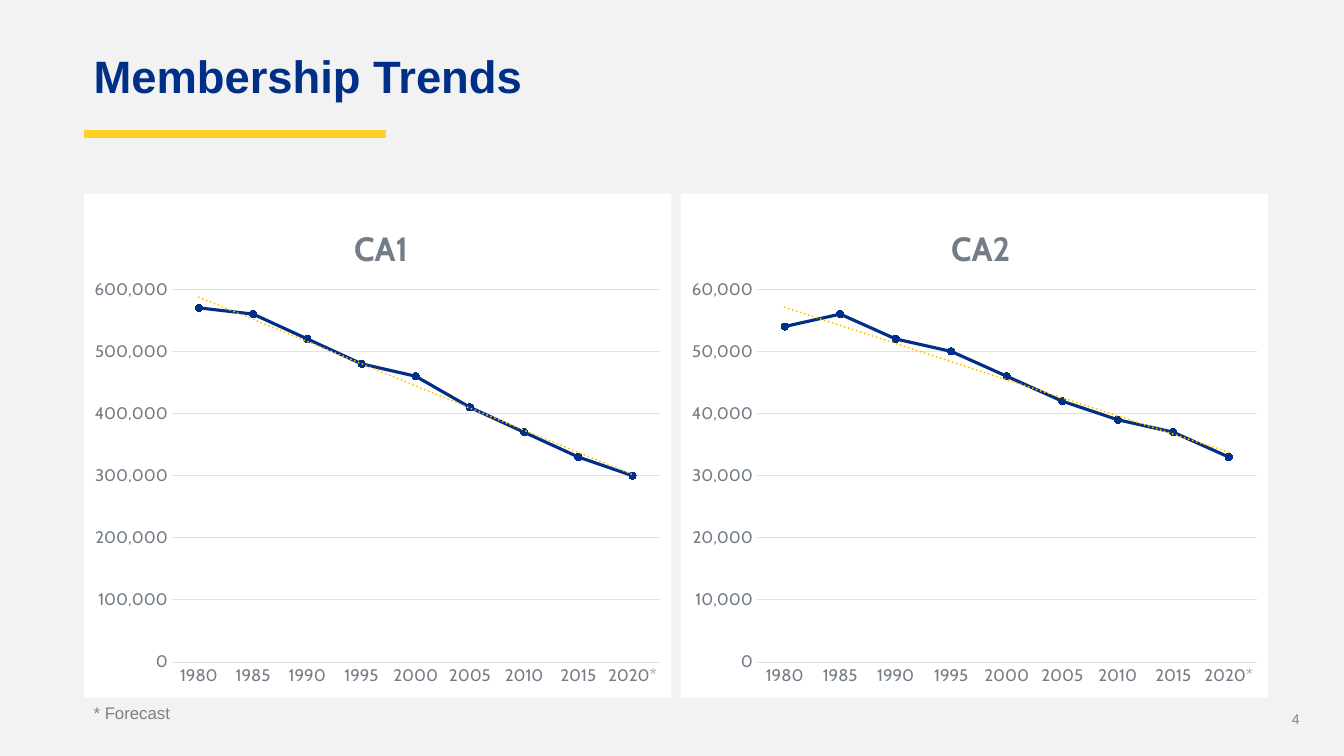
from pptx import Presentation
from pptx.chart.data import CategoryChartData
from pptx.dml.color import RGBColor
from pptx.enum.chart import XL_CHART_TYPE, XL_MARKER_STYLE, XL_TICK_MARK
from pptx.enum.shapes import MSO_CONNECTOR
from pptx.enum.text import MSO_ANCHOR, PP_ALIGN
from pptx.oxml import parse_xml
from pptx.oxml.ns import nsdecls, qn
from pptx.util import Inches, Pt

NAVY, YELLOW, AMBER = "002F87", "FFD127", "FFC000"
SLATE, GRAY, RULE, WHITE, PAPER = "747D86", "808080", "DFE1E3", "FFFFFF", "F2F2F2"

HEADING = "Membership Trends"
FOOTNOTE = "* Forecast"
PAGE = "4"
YEARS = ["1980", "1985", "1990", "1995", "2000", "2005", "2010", "2015", "2020*"]
TRENDS = [
    {"area": "CA1", "step": 100000, "plot_left": 0.15,
     "members": [570000, 560000, 520000, 480000, 460000, 410000, 370000, 330000, 300000]},
    {"area": "CA2", "step": 10000, "plot_left": 0.13,
     "members": [54000, 56000, 52000, 50000, 46000, 42000, 39000, 37000, 33000]},
]
LEFT = 0.83
PANEL_TOP, PANEL_WIDTH, PANEL_HEIGHT, PANEL_GAP = 1.92, 5.83, 5, 0.09


def color(value):
    return RGBColor.from_string(value)


def style_font(font, size, shade, face, bold=False):
    font.size, font.name, font.bold = Pt(size), face, bold
    font.color.rgb = color(shade)


def style_line(line, shade, width):
    line.color.rgb = color(shade)
    line.width = Pt(width)


def add_label(slide, words, box, size, shade, bold=False,
              align=PP_ALIGN.LEFT, anchor=MSO_ANCHOR.TOP):
    frame = slide.shapes.add_textbox(*map(Inches, box)).text_frame
    frame.word_wrap = True
    frame.vertical_anchor = anchor
    paragraph = frame.paragraphs[0]
    paragraph.alignment = align
    run = paragraph.add_run()
    run.text = words
    style_font(run.font, size, shade, "Arial", bold)
    return frame


def place(element, index, **measures):
    for layout in element.findall(qn("c:layout")):
        element.remove(layout)
    target = '<c:layoutTarget val="inner"/>' if "w" in measures else ""
    modes = "".join(f'<c:{key}Mode val="edge"/>' for key in "xy")
    sizes = "".join(f'<c:{key} val="{value:.2f}"/>' for key, value in measures.items())
    element.insert(index, parse_xml(
        f'<c:layout {nsdecls("c")}><c:manualLayout>{target}{modes}{sizes}'
        '</c:manualLayout></c:layout>'))


def add_trend(slide, trend, left):
    data = CategoryChartData(number_format="#,##0")
    data.categories = YEARS
    data.add_series("Series 1", trend["members"])
    chart = slide.shapes.add_chart(
        XL_CHART_TYPE.LINE_MARKERS, Inches(left), Inches(PANEL_TOP),
        Inches(PANEL_WIDTH), Inches(PANEL_HEIGHT), data).chart
    chart.has_legend = False
    style_font(chart.font, 10, "33373B", "Cabin")

    chart.has_title = True
    area = chart.chart_title.text_frame.paragraphs[0].add_run()
    area.text = trend["area"]
    style_font(area.font, 24, SLATE, "Cabin", True)
    chart.chart_title.include_in_layout = False
    place(chart.chart_title._element, 1, x=0.45, y=0.05)

    years, members = chart.category_axis, chart.value_axis
    for axis in (years, members):
        axis.major_tick_mark = axis.minor_tick_mark = XL_TICK_MARK.NONE
        style_font(axis.tick_labels.font, 12, SLATE, "Cabin")
    style_line(years.format.line, RULE, 0.75)
    members.format.line.fill.background()
    members.has_major_gridlines = True
    style_line(members.major_gridlines.format.line, RULE, 0.75)
    members.minimum_scale = 0
    members.maximum_scale = 6 * trend["step"]
    members.major_unit = trend["step"]
    members.tick_labels.number_format = "#,##0"
    members.tick_labels.number_format_is_linked = False

    plot = chart.plots[0]
    plot.vary_by_categories = False
    series = plot.series[0]
    series.smooth = False
    style_line(series.format.line, NAVY, 2.25)
    series.marker.style = XL_MARKER_STYLE.CIRCLE
    series.marker.size = 5
    series.marker.format.fill.solid()
    series.marker.format.fill.fore_color.rgb = color(NAVY)
    style_line(series.marker.format.line, NAVY, 0.75)
    series._element.find(qn("c:cat")).addprevious(parse_xml(
        f'<c:trendline {nsdecls("c", "a")}><c:spPr><a:ln w="{Pt(1.5)}" cap="rnd">'
        f'<a:solidFill><a:srgbClr val="{AMBER}"/></a:solidFill>'
        '<a:prstDash val="sysDot"/></a:ln></c:spPr><c:trendlineType val="linear"/>'
        '<c:dispRSqr val="0"/><c:dispEq val="0"/></c:trendline>'))

    body = chart._chartSpace.find(qn("c:chart"))
    place(body.find(qn("c:plotArea")), 0, x=trend["plot_left"], y=0.19,
          w=0.98 - trend["plot_left"], h=0.74)
    body.addnext(parse_xml(
        f'<c:spPr {nsdecls("c", "a")}><a:solidFill><a:srgbClr val="{WHITE}"/>'
        '</a:solidFill><a:ln><a:noFill/></a:ln></c:spPr>'))


def main():
    deck = Presentation()
    deck.slide_width, deck.slide_height = Inches(13.33), Inches(7.5)
    slide = deck.slides.add_slide(deck.slide_layouts[6])
    slide.background.fill.solid()
    slide.background.fill.fore_color.rgb = color(PAPER)

    page = add_label(slide, PAGE, (12.28, 7, 0.61, 0.27), 10, GRAY,
                     align=PP_ALIGN.RIGHT, anchor=MSO_ANCHOR.MIDDLE)
    page.margin_left = page.margin_right = 0

    accent = slide.shapes.add_connector(
        MSO_CONNECTOR.STRAIGHT, Inches(LEFT), Inches(1.33), Inches(LEFT + 3), Inches(1.33))
    style_line(accent.line, YELLOW, 6)
    accent._element.spPr.append(parse_xml(f'<a:effectLst {nsdecls("a")}/>'))

    heading = add_label(slide, HEADING, (LEFT, 0.49, 11.67, 0.58), 32.4, NAVY,
                        bold=True, anchor=MSO_ANCHOR.MIDDLE)
    heading.paragraphs[0].line_spacing = 0.9

    for column, trend in enumerate(TRENDS):
        add_trend(slide, trend, LEFT + column * (PANEL_WIDTH + PANEL_GAP))

    add_label(slide, FOOTNOTE, (LEFT, 6.92, 4.75, 0.3), 12, GRAY)
    deck.save("out.pptx")


if __name__ == "__main__":
    main()
